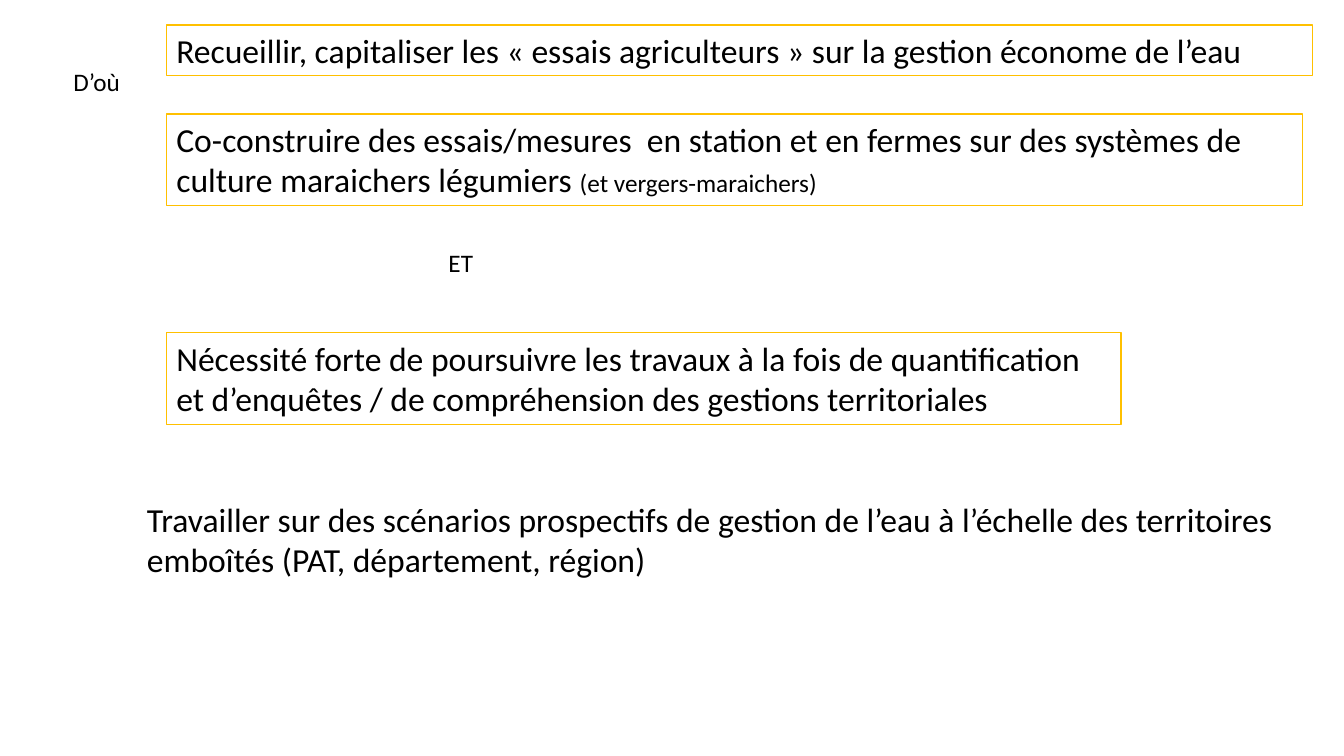
from dataclasses import dataclass

import pptx
import pptx.dml.color
import pptx.enum.shapes
import pptx.enum.text
import pptx.util

SLIDE_WIDTH = pptx.util.Inches(13.33)
SLIDE_HEIGHT = pptx.util.Inches(7.5)
COLOURS = {"text": "000000", "fill": "FFFFFF", "frame": "FFC000"}
FONT = "Calibri"
LARGE, SMALL = 24, 18

FRAME_LEFT = 12.38
SMALL_LINE, LARGE_LINE, TWO_LINES = 5.33, 6.67, 12.13


@dataclass(frozen=True)
class Run:
    text: str
    size: int = LARGE


@dataclass(frozen=True)
class Statement:
    left: float
    top: float
    width: float
    height: float
    runs: tuple[Run, ...]
    framed: bool = False


STATEMENTS = (
    Statement(4.73, 8.13, 11.03, SMALL_LINE, (Run("D’où", SMALL),)),
    Statement(FRAME_LEFT, 44, 71.04, TWO_LINES, (
        Run("Nécessité forte de poursuivre les travaux à la fois de quantification "
            "et d’enquêtes / de compréhension des gestions territoriales"),
    ), framed=True),
    Statement(FRAME_LEFT, 3.33, 85.3, LARGE_LINE, (
        Run("Recueillir, capitaliser les « essais agriculteurs » sur la gestion "
            "économe de l’eau"),
    ), framed=True),
    Statement(FRAME_LEFT, 15.07, 84.55, TWO_LINES, (
        Run("Co-construire des essais/mesures  en station et en fermes sur des "
            "systèmes de culture maraichers légumiers "),
        Run("(et vergers-maraichers)", SMALL),
    ), framed=True),
    Statement(10.2, 65.33, 88.9, TWO_LINES, (
        Run("Travailler sur des scénarios prospectifs de gestion de l’eau à l’échelle "
            "des territoires emboîtés (PAT, département, région)"),
    )),
    Statement(32.63, 32, 17.4, SMALL_LINE, (Run("ET", SMALL),)),
)


def colour(name: str) -> pptx.dml.color.RGBColor:
    return pptx.dml.color.RGBColor.from_string(COLOURS[name])


def apply_format(target: object, values: dict[str, object]) -> None:
    for name, value in values.items():
        setattr(target, name, value)


def draw_statement(slide: pptx.slide.Slide, statement: Statement) -> None:
    bounds = (
        round(SLIDE_WIDTH * statement.left / 100),
        round(SLIDE_HEIGHT * statement.top / 100),
        round(SLIDE_WIDTH * statement.width / 100),
        round(SLIDE_HEIGHT * statement.height / 100),
    )
    if statement.framed:
        shape = slide.shapes.add_shape(pptx.enum.shapes.MSO_SHAPE.RECTANGLE, *bounds)
        shape.shadow.inherit = False
        shape.fill.solid()
        shape.fill.fore_color.rgb = colour("fill")
        shape.line.color.rgb = colour("frame")
        shape.line.width = pptx.util.Pt(1)
    else:
        shape = slide.shapes.add_textbox(*bounds)
    apply_format(shape.text_frame, {
        "word_wrap": True,
        "auto_size": pptx.enum.text.MSO_AUTO_SIZE.SHAPE_TO_FIT_TEXT,
        "vertical_anchor": pptx.enum.text.MSO_ANCHOR.TOP,
    })
    paragraph = shape.text_frame.paragraphs[0]
    paragraph.alignment = pptx.enum.text.PP_ALIGN.LEFT
    for part in statement.runs:
        run = paragraph.add_run()
        run.text = part.text
        apply_format(run.font, {"name": FONT, "size": pptx.util.Pt(part.size)})
        run.font.color.rgb = colour("text")


def main() -> None:
    presentation = pptx.Presentation()
    apply_format(presentation, {"slide_width": SLIDE_WIDTH, "slide_height": SLIDE_HEIGHT})
    slide = presentation.slides.add_slide(presentation.slide_layouts[6])
    for statement in STATEMENTS:
        draw_statement(slide, statement)
    presentation.save("out.pptx")


if __name__ == "__main__":
    main()
